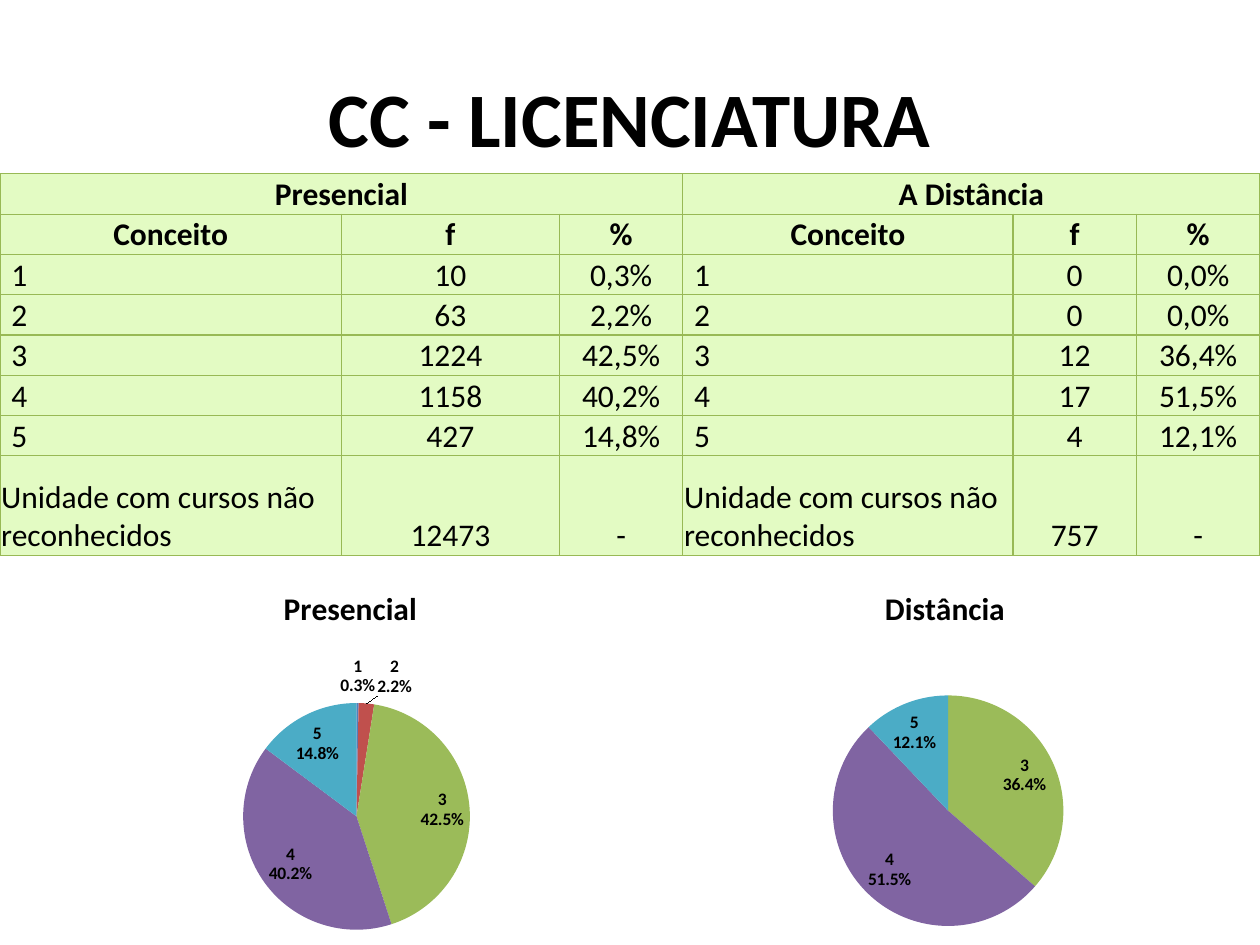
from dataclasses import dataclass

from lxml import etree
from pptx import Presentation
from pptx.chart.data import CategoryChartData
from pptx.dml.color import RGBColor
from pptx.enum.chart import XL_CHART_TYPE, XL_LABEL_POSITION
from pptx.enum.text import MSO_ANCHOR, PP_ALIGN
from pptx.oxml import parse_xml
from pptx.oxml.ns import nsdecls, qn
from pptx.util import Inches, Pt

PIE = XL_CHART_TYPE.PIE
BEST_FIT = XL_LABEL_POSITION.BEST_FIT
LEFT, CENTER = PP_ALIGN.LEFT, PP_ALIGN.CENTER
MIDDLE, BOTTOM = MSO_ANCHOR.MIDDLE, MSO_ANCHOR.BOTTOM


@dataclass(frozen=True)
class Theme:
    font: str = "Calibri"
    text: str = "000000"
    cell: str = "E3FBC3"
    border: str = "98B955"
    slices: tuple = ("4F81BD", "C0504D", "9BBB59", "8064A2", "4BACC6")
    title_size: int = 44
    body_size: int = 18
    label_size: int = 10
    border_width: float = 0.75


@dataclass(frozen=True)
class PieSpec:
    title: str
    left: float
    values: tuple
    plot: tuple  # x, y, width, height as fractions of the chart


THEME = Theme()
GRADES = ("1", "2", "3", "4", "5")
UNRECOGNIZED = "Unidade com cursos não reconhecidos"
COLUMN_WIDTHS = (2.71, 1.73, 0.98, 2.62, 0.98, 0.98)
ROW_HEIGHTS = (0.32,) * 7 + (0.79,)
GROUP_WIDTH = 3
HEADER_ROWS = 2
ROWS = (
    ("Presencial", "", "", "A Distância", "", ""),
    ("Conceito", "f", "%") * 2,
    ("1", "10", "0,3%", "1", "0", "0,0%"),
    ("2", "63", "2,2%", "2", "0", "0,0%"),
    ("3", "1224", "42,5%", "3", "12", "36,4%"),
    ("4", "1158", "40,2%", "4", "17", "51,5%"),
    ("5", "427", "14,8%", "5", "4", "12,1%"),
    (UNRECOGNIZED, "12473", "-", UNRECOGNIZED, "757", "-"),
)
PIES = (
    PieSpec("Distância", 5, (0, 0, 36.4, 51.5, 12.1), (0.32, 0.34, 0.37, 0.61)),
    PieSpec("Presencial", 0.28, (0.3, 2.2, 42.5, 40.2, 14.8), (0.33, 0.36, 0.36, 0.6)),
)


def style_font(font, size: float, bold: bool) -> None:
    font.name = THEME.font
    font.size = Pt(size)
    font.bold = bold
    font.color.rgb = RGBColor.from_string(THEME.text)


def write(text_frame, text: str, size: float, bold: bool, alignment) -> None:
    paragraph = text_frame.paragraphs[0]
    paragraph.alignment = alignment
    run = paragraph.add_run()
    run.text = text
    style_font(run.font, size, bold)


def add_title(slide, text: str) -> None:
    title = slide.shapes.title
    title.left, title.top = Inches(0.5), Inches(0.3)
    title.width, title.height = Inches(9), Inches(1.25)
    title.text_frame.vertical_anchor = MIDDLE
    write(title.text_frame, text, THEME.title_size, True, CENTER)


def style_cell(cell, left_margin: float) -> None:
    cell.vertical_anchor = BOTTOM
    cell.margin_left = Inches(left_margin)
    cell.margin_top = cell.margin_right = Inches(0.01)
    cell.margin_bottom = 0
    properties = cell._tc.get_or_add_tcPr()
    for side in ("lnL", "lnR", "lnT", "lnB"):
        properties.append(parse_xml(
            f'<a:{side} {nsdecls("a")} w="{Pt(THEME.border_width)}">'
            f'<a:solidFill><a:srgbClr val="{THEME.border}"/></a:solidFill></a:{side}>'))
    cell.fill.solid()
    cell.fill.fore_color.rgb = RGBColor.from_string(THEME.cell)


def add_grade_table(slide) -> None:
    frame = slide.shapes.add_table(
        len(ROWS), len(COLUMN_WIDTHS), 0, Inches(1.38),
        Inches(sum(COLUMN_WIDTHS)), Inches(sum(ROW_HEIGHTS)))
    table = frame.table
    table.first_row = table.horz_banding = False
    for column, width in zip(table.columns, COLUMN_WIDTHS):
        column.width = Inches(width)
    for row, height in zip(table.rows, ROW_HEIGHTS):
        row.height = Inches(height)
    for start in range(0, len(COLUMN_WIDTHS), GROUP_WIDTH):
        table.cell(0, start).merge(table.cell(0, start + GROUP_WIDTH - 1))

    for row_index, texts in enumerate(ROWS):
        header = row_index < HEADER_ROWS
        for column_index, text in enumerate(texts):
            cell = table.cell(row_index, column_index)
            label = column_index % GROUP_WIDTH == 0 and not header
            style_cell(cell, 0.09 if label and text in GRADES else 0.01)
            if text:
                write(cell.text_frame, text, THEME.body_size, header,
                      LEFT if label else CENTER)


def set_plot_layout(chart, bounds: tuple) -> None:
    plot_area = chart._chartSpace.chart.plotArea
    for old_layout in plot_area.findall(qn("c:layout")):
        plot_area.remove(old_layout)
    layout = etree.Element(qn("c:layout"))
    manual = etree.SubElement(layout, qn("c:manualLayout"))
    settings = [("layoutTarget", "inner"), ("xMode", "edge"), ("yMode", "edge")]
    settings += zip("xywh", bounds)
    for name, value in settings:
        etree.SubElement(manual, qn(f"c:{name}"), val=str(value))
    plot_area.insert(0, layout)


def add_labels(series, values: tuple) -> None:
    labels = series.data_labels
    style_font(labels.font, THEME.label_size, True)
    labels.number_format = "0.0%"
    labels.number_format_is_linked = False
    labels.position = BEST_FIT
    labels.show_value = False
    labels.show_category_name = labels.show_percentage = True
    # Empty slices carry no label
    empty = [index for index, value in enumerate(values) if value == 0]
    for place, index in enumerate(empty):
        labels._element.insert(place, parse_xml(
            f'<c:dLbl {nsdecls("c")}><c:idx val="{index}"/>'
            f'<c:delete val="1"/></c:dLbl>'))


def add_pie(slide, pie: PieSpec) -> None:
    data = CategoryChartData()
    data.categories = GRADES
    data.add_series("Series 1", pie.values)
    chart = slide.shapes.add_chart(
        PIE, Inches(pie.left), Inches(4.5), Inches(5), Inches(3), data).chart
    style_font(chart.font, THEME.label_size, False)
    chart.has_legend = False
    chart.has_title = True
    write(chart.chart_title.text_frame, pie.title, THEME.body_size, True, CENTER)
    plot = chart.plots[0]
    plot.vary_by_categories = True
    series = plot.series[0]
    for index, color in enumerate(THEME.slices):
        fill = series.points[index].format.fill
        fill.solid()
        fill.fore_color.rgb = RGBColor.from_string(color)
    add_labels(series, pie.values)
    set_plot_layout(chart, pie.plot)


def main() -> None:
    presentation = Presentation()
    presentation.slide_width, presentation.slide_height = Inches(10), Inches(7.5)
    slide = presentation.slides.add_slide(presentation.slide_layouts[5])
    add_title(slide, "CC - LICENCIATURA")
    add_grade_table(slide)
    for pie in PIES:
        add_pie(slide, pie)
    presentation.save("out.pptx")


if __name__ == "__main__":
    main()
